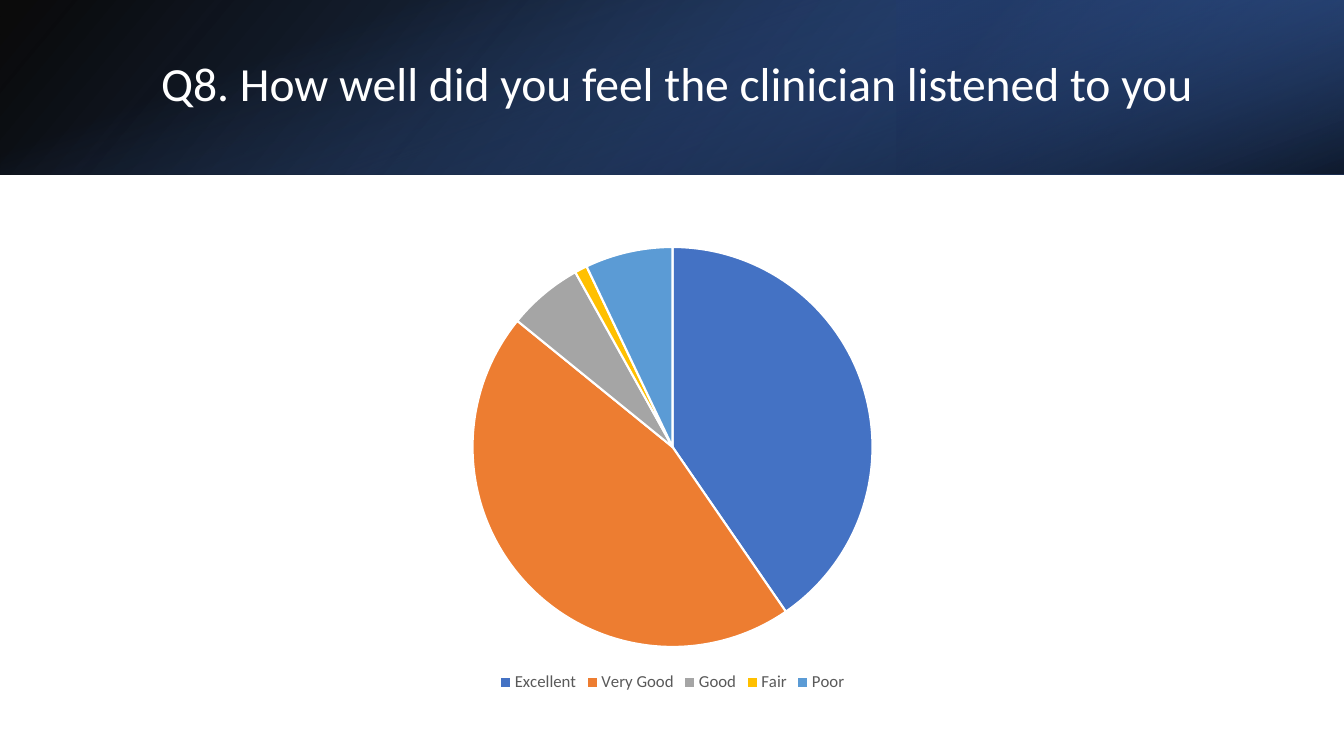
from lxml import etree
from pptx import Presentation
from pptx import util as u
from pptx.chart import data
from pptx.dml import color
from pptx.enum import chart as ch
from pptx.enum import shapes, text
from pptx.oxml import ns

PX = 9525
FONT = "Calibri"
COLORS = {
    "white": "FFFFFF",
    "black": "000000",
    "navy": "203864",
    "deep": "2F5597",
    "blue": "4472C4",
    "orange": "ED7D31",
    "gray": "A5A5A5",
    "gold": "FFC000",
    "sky": "5B9BD5",
    "label": "595959",
}
RATINGS = [
    ("Excellent", 40, "blue"),
    ("Very Good", 45, "orange"),
    ("Good", 6, "gray"),
    ("Fair", 1, "gold"),
    ("Poor", 7, "sky"),
]


def rgb(name):
    return color.RGBColor.from_string(COLORS[name])


def emu(box):
    return [u.Emu(side * PX) for side in box]


def add_gradient(page, box, stops, angle, rotation=0, flip=False):
    panel = page.shapes.add_shape(shapes.MSO_SHAPE.RECTANGLE, *emu(box))
    panel.shadow.inherit = False
    panel.rotation = rotation
    if flip:
        panel.element.spPr.xfrm.set("flipH", "1")
    panel.fill.gradient()
    panel.fill.gradient_angle = 360 - angle
    for stop, (position, name, _) in zip(panel.fill.gradient_stops, stops):
        stop.position = position / 100
        stop.color.rgb = rgb(name)
    tints = panel.element.spPr.findall(".//" + ns.qn("a:srgbClr"))
    for tint, (_, _, opacity) in zip(tints, stops):
        etree.SubElement(tint, ns.qn("a:alpha")).set("val", str(opacity * 1000))
    panel.line.fill.background()


def add_text(page, box, words, size, ink, spacing=1.0):
    title = page.shapes.add_textbox(*emu(box))
    frame = title.text_frame
    frame.word_wrap = True
    frame.vertical_anchor = text.MSO_ANCHOR.MIDDLE
    para = frame.paragraphs[0]
    para.line_spacing = spacing
    span = para.add_run()
    span.text = words
    span.font.name = FONT
    span.font.size = u.Pt(size)
    span.font.color.rgb = rgb(ink)


def add_header(page, box, words):
    left, top, width, height = box
    add_gradient(page, box, [(0, "black", 96), (100, "deep", 100)], 140, flip=True)
    third = width // 3
    add_gradient(page, (left + width - third, top, third, height),
                 [(19, "navy", 68), (100, "blue", 79)], 320, rotation=180, flip=True)
    shift = (width - height) // 2
    add_gradient(page, (left + shift, top - shift, height, width),
                 [(23, "blue", 0), (99, "black", 74)], 340, rotation=90)
    add_text(page, (left + 144, top + 36, 1054, 92), words,
             size=34, ink="white", spacing=0.9)


def add_pie(page, box):
    names, values, inks = zip(*RATINGS)
    table = data.CategoryChartData()
    table.categories = names
    table.add_series("Series 1", values)
    pie = page.shapes.add_chart(ch.XL_CHART_TYPE.PIE, *emu(box), table).chart
    pie.has_title = False
    pie.font.name = FONT
    pie.font.size = u.Pt(10)
    pie.font.color.rgb = rgb("black")
    pie.has_legend = True
    legend = pie.legend
    legend.position = ch.XL_LEGEND_POSITION.BOTTOM
    legend.include_in_layout = False
    legend.font.name = FONT
    legend.font.size = u.Pt(12)
    legend.font.color.rgb = rgb("label")
    plot = pie.plots[0]
    plot.vary_by_categories = True
    for index, ink in enumerate(inks):
        shape = plot.series[0].points[index].format
        shape.fill.solid()
        shape.fill.fore_color.rgb = rgb(ink)
        shape.line.color.rgb = rgb("white")
        shape.line.width = u.Pt(1.5)


def main():
    deck = Presentation()
    deck.slide_width, deck.slide_height = emu((1280, 720))
    page = deck.slides.add_slide(deck.slide_layouts[6])
    add_header(page, (0, 0, 1280, 166),
               "Q8. How well did you feel the clinician listened to you")
    add_pie(page, (67, 222, 1147, 441))
    deck.save("out.pptx")


if __name__ == "__main__":
    main()
